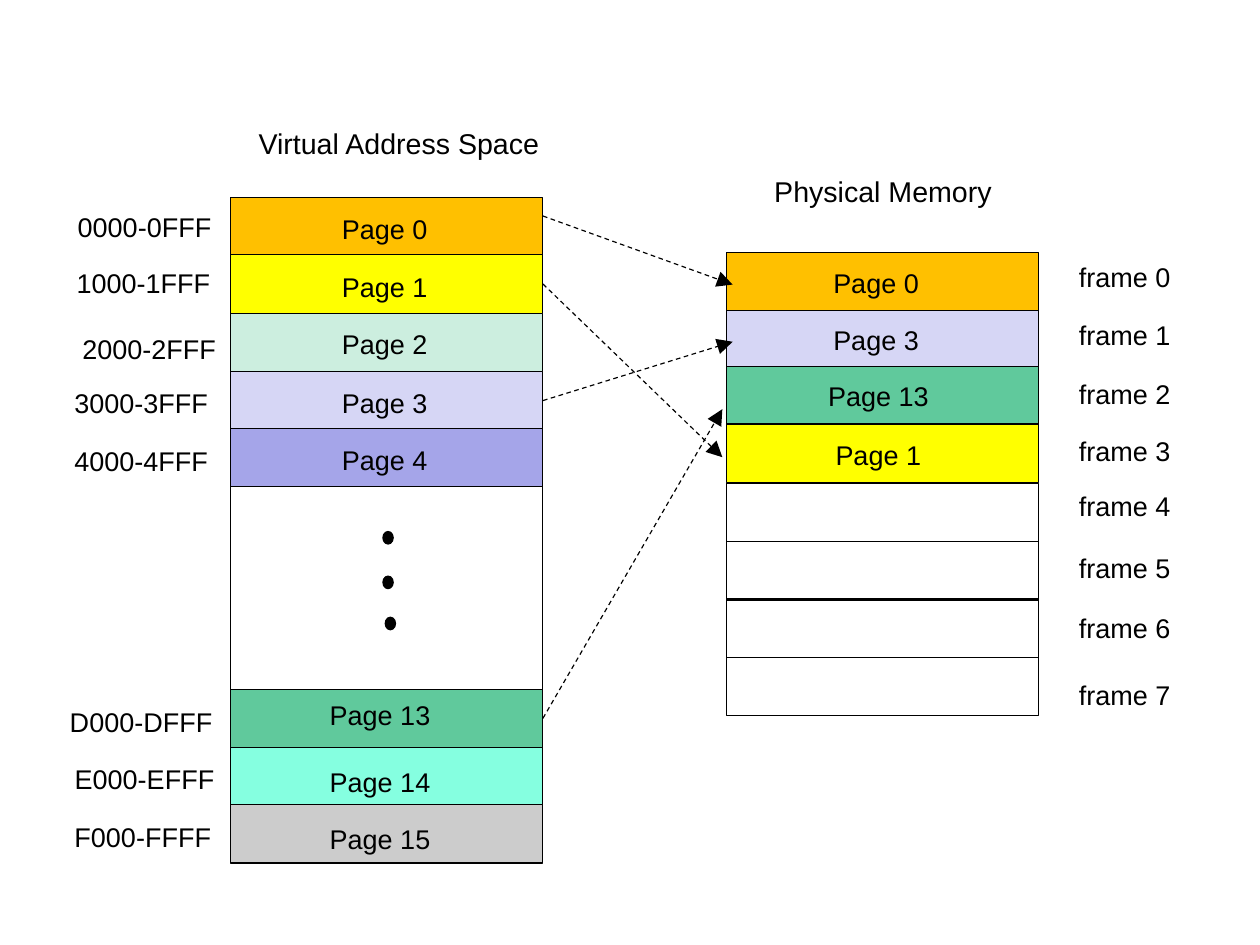
from pptx import Presentation
from pptx.dml.color import RGBColor
from pptx.enum.dml import MSO_LINE
from pptx.enum.shapes import MSO_CONNECTOR, MSO_SHAPE
from pptx.enum.text import MSO_AUTO_SIZE, PP_ALIGN
from pptx.oxml.ns import qn
from pptx.util import Cm, Inches, Pt
from lxml.etree import SubElement

COLOURS = {
    "ink": "000000", "orange": "FFC000", "yellow": "FFFF00", "mint": "CCEEDF",
    "lavender": "D6D6F5", "violet": "A5A5E9", "green": "60C99C",
    "aqua": "85FFE0", "grey": "CCCCCC",
}
PAGE_LEFT, FRAME_LEFT = 2.02, 6.36
CELL_WIDTH, CELL_HEIGHT = 2.73, 0.51
PAGE_RIGHT = PAGE_LEFT + CELL_WIDTH

PAGES = [
    ("Page 0", "orange", 1.73, 2.89, 1.81),
    ("Page 1", "yellow", 2.23, 2.89, 2.32),
    ("Page 2", "mint", 2.74, 2.89, 2.82),
    ("Page 3", "lavender", 3.25, 2.89, 3.33),
    ("Page 4", "violet", 3.75, 2.89, 3.83),
    ("Page 13", "green", 6.03, 2.78, 6.06),
    ("Page 14", "aqua", 6.54, 2.78, 6.65),
    ("Page 15", "grey", 7.04, 2.78, 7.15),
]
LOADED_FRAMES = [
    ("Page 0", "orange", 2.21, 7.19, 2.28),
    ("Page 3", "lavender", 2.72, 7.19, 2.78),
    ("Page 13", "green", 3.21, 7.14, 3.27),
    ("Page 1", "yellow", 3.71, 7.21, 3.79),
]
FREE_FRAME_TOPS = [4.23, 4.74, 5.24, 5.75]
FRAME_LABEL_TOPS = [2.23, 2.74, 3.25, 3.75, 4.23, 4.78, 5.3, 5.89]
ADDRESSES = [
    ("0000-0FFF", 0.58, 1.79, 1.37), ("1000-1FFF", 0.57, 2.28, 1.37),
    ("2000-2FFF", 0.62, 2.86, 1.37), ("3000-3FFF", 0.55, 3.33, 1.37),
    ("4000-4FFF", 0.55, 3.84, 1.37), ("D000-DFFF", 0.51, 6.12, 1.45),
    ("E000-EFFF", 0.55, 6.62, 1.43), ("F000-FFFF", 0.55, 7.13, 1.4),
]
MAPPINGS = [
    ("Page 0", 1.89, 6.41, 2.49), ("Page 3", 3.5, 6.41, 2.99),
    ("Page 13", 6.28, 6.32, 3.58), ("Page 1", 2.49, 6.32, 4),
]
ELLIPSIS_DOTS = [(3.35, 4.65), (3.35, 5.04), (3.37, 5.4)]


class Diagram:
    """Draws memory-map elements in one style on the current slide."""

    def __init__(self, page):
        self.page = page
        self.font = {"name": "Arial", "size": Pt(17)}
        self.frame = {"word_wrap": False, "auto_size": MSO_AUTO_SIZE.SHAPE_TO_FIT_TEXT}

    def colour(self, name):
        """Return the named colour."""
        return RGBColor.from_string(COLOURS[name])

    def outline(self, line):
        """Give a line the common ink and width."""
        line.color.rgb = self.colour("ink")
        line.width = Pt(0.75)

    def shape(self, left, top, width, height, fill=None, kind=MSO_SHAPE.RECTANGLE):
        """Add an outlined shape, filled when a colour is named."""
        box = self.page.shapes.add_shape(
            kind, Inches(left), Inches(top), Inches(width), Inches(height))
        box.shadow.inherit = False
        self.outline(box.line)
        if fill:
            box.fill.solid()
            box.fill.fore_color.rgb = self.colour(fill)
        else:
            box.fill.background()
        return box

    def cell(self, name, fill, left, top, label_left, label_top):
        """Add a filled memory cell with its page name."""
        box = self.shape(left, top, CELL_WIDTH, CELL_HEIGHT, fill)
        self.label(name, label_left, label_top, 0.95 if len(name) == 6 else 1.09)
        return box

    def label(self, text, left, top, width, height=0.39, **changes):
        """Add one unwrapped line of centred text."""
        box = self.page.shapes.add_textbox(
            Inches(left), Inches(top), Inches(width), Inches(height))
        for name, value in self.frame.items():
            setattr(box.text_frame, name, value)
        para = box.text_frame.paragraphs[0]
        para.alignment = PP_ALIGN.CENTER
        span = para.add_run()
        span.text = text
        for name, value in {**self.font, **changes}.items():
            setattr(span.font, name, value)
        span.font.color.rgb = self.colour("ink")

    def arrow(self, start, end, source=None):
        """Add a dashed arrow, joined to the right side of a source cell."""
        link = self.page.shapes.add_connector(
            MSO_CONNECTOR.STRAIGHT, *(Inches(value) for value in (*start, *end)))
        if source is not None:
            link.begin_connect(source, 3)
        self.outline(link.line)
        link.line.dash_style = MSO_LINE.DASH
        SubElement(link.line._get_or_add_ln(), qn("a:tailEnd"),
                   type="triangle", w="lg", len="lg")
        SubElement(link._element.spPr, qn("a:effectLst"))


def main():
    """Build the paging diagram and save it."""
    deck = Presentation()
    deck.slide_width, deck.slide_height = Cm(28), Cm(21)
    diagram = Diagram(deck.slides.add_slide(deck.slide_layouts[6]))

    cells = {}
    for name, fill, top, label_left, label_top in PAGES:
        cells[name] = diagram.cell(name, fill, PAGE_LEFT, top, label_left, label_top)
    diagram.shape(PAGE_LEFT, 4.26, CELL_WIDTH, 1.77)

    for top in FREE_FRAME_TOPS:
        diagram.shape(FRAME_LEFT, top, CELL_WIDTH, CELL_HEIGHT)
    for number, top in enumerate(FRAME_LABEL_TOPS):
        diagram.label(f"frame {number}", 9.34, top, 1)

    diagram.label("Virtual Address Space", 2.16, 1.05, 2.66, 0.41, size=Pt(18))
    diagram.label("Physical Memory", 6.67, 1.47, 2.11, 0.41, size=Pt(18))
    for address in ADDRESSES:
        diagram.label(*address)
    for name, fill, top, label_left, label_top in LOADED_FRAMES:
        diagram.cell(name, fill, FRAME_LEFT, top, label_left, label_top)

    for name, start_top, end_left, end_top in MAPPINGS:
        source = None if name == "Page 0" else cells[name]
        diagram.arrow((PAGE_RIGHT, start_top), (end_left, end_top), source)
    for left, top in ELLIPSIS_DOTS:
        diagram.shape(left, top, 0.09, 0.11, "ink", MSO_SHAPE.OVAL)

    deck.save("out.pptx")


if __name__ == "__main__":
    main()
